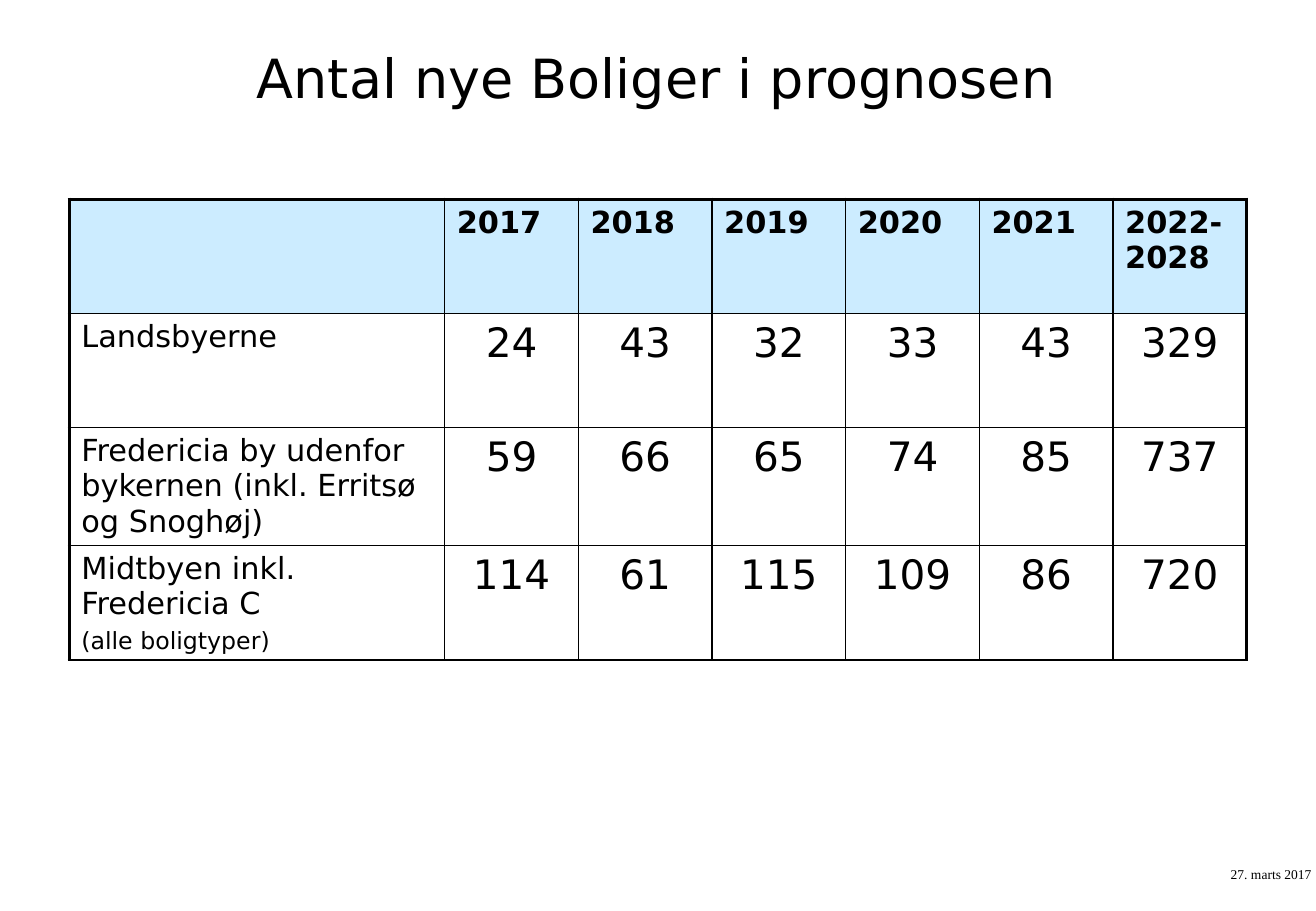
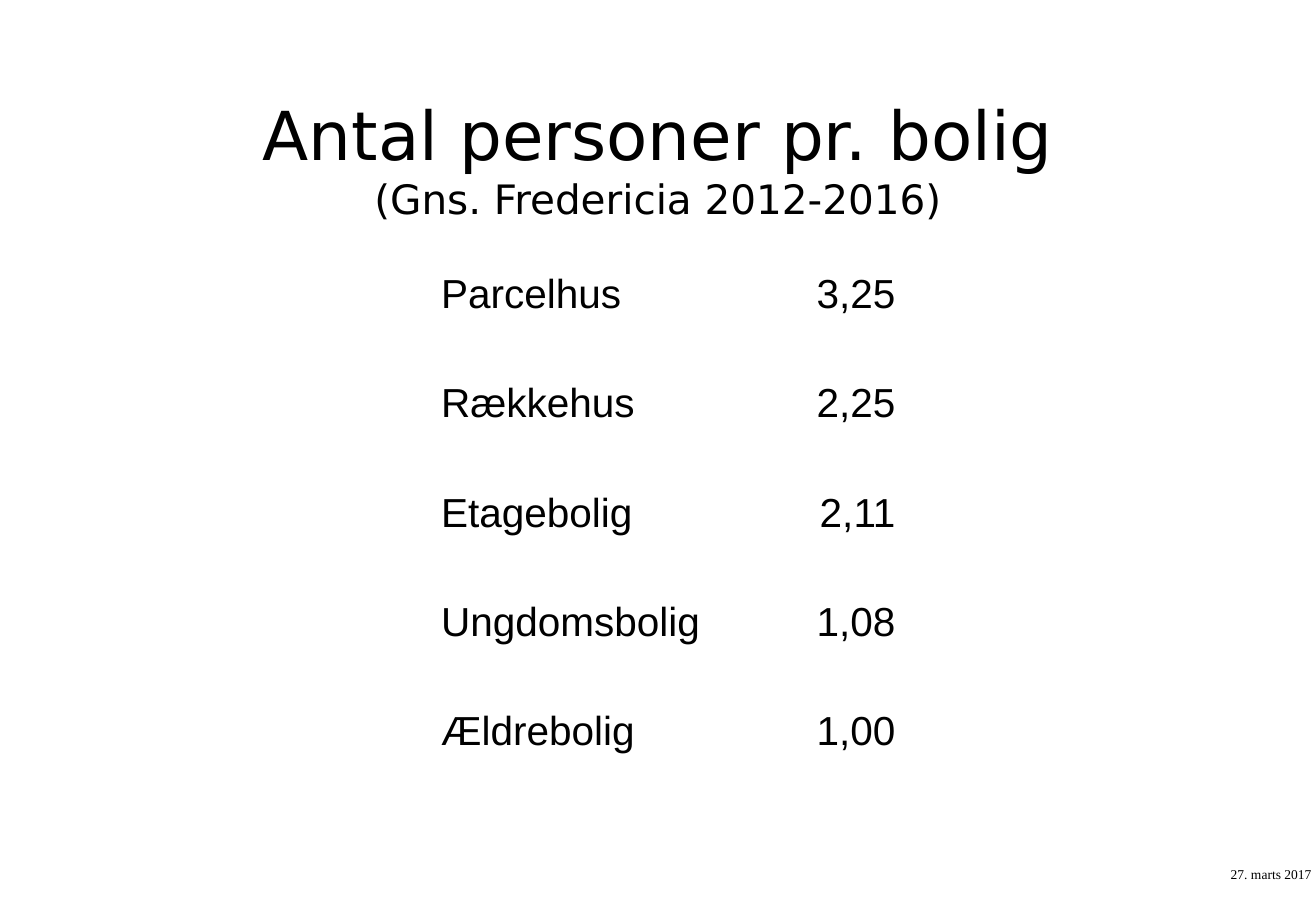
import pptx
import pptx.dml.color
import pptx.enum.text
import pptx.util
from lxml import etree
from pptx.util import Inches

INK = {"text": "000000", "line": "000000", "head": "CCECFF"}
SANS, PLAIN, SERIF = "DejaVu Sans", "Arial", "Times New Roman"
ALIGN = pptx.enum.text.PP_ALIGN
ANCHOR = pptx.enum.text.MSO_ANCHOR
NS = "http://schemas.openxmlformats.org/drawingml/2006/main"
NONE, THIN, THICK = 0, 1, 2.25

HOMES = [
    ["", "2017", "2018", "2019", "2020", "2021", "2022-2028"],
    ["Landsbyerne", "24", "43", "32", "33", "43", "329"],
    ["Fredericia by udenfor bykernen (inkl. Erritsø og Snoghøj)",
     "59", "66", "65", "74", "85", "737"],
    ["Midtbyen inkl. Fredericia C", "114", "61", "115", "109", "86", "720"],
]
PEOPLE = [
    ["Parcelhus", "3,25"],
    ["Rækkehus", "2,25"],
    ["Etagebolig", "2,11"],
    ["Ungdomsbolig", "1,08"],
    ["Ældrebolig", "1,00"],
]


def rgb(name):
    return pptx.dml.color.RGBColor.from_string(INK[name])


def style(para, text, size, face, align=ALIGN.LEFT, bold=False):
    para.text = text
    para.alignment = align
    font = para.font
    font.size = pptx.util.Pt(size)
    font.name = face
    font.bold = bold
    font.color.rgb = rgb("text")


def add_slide(deck, box, lines, anchor):
    slide = deck.slides.add_slide(deck.slide_layouts[5])
    title = slide.shapes.title
    title.left, title.top, title.width, title.height = map(Inches, box)
    frame = title.text_frame
    frame.auto_size = pptx.enum.text.MSO_AUTO_SIZE.NONE
    frame.vertical_anchor = anchor
    for num, (text, size) in enumerate(lines):
        para = frame.add_paragraph() if num else frame.paragraphs[0]
        style(para, text, size, SANS, ALIGN.CENTER)
    add_date(slide)
    return slide


def add_date(slide):
    box = slide.shapes.add_textbox(
        Inches(10.03), Inches(7.08), Inches(0.8), Inches(0.23))
    frame = box.text_frame
    frame.margin_right = 0
    frame.word_wrap = False
    style(frame.paragraphs[0], "27. marts 2017", 8, SERIF)


def add_grid(slide, left, top, cols, rows):
    frame = slide.shapes.add_table(
        len(rows), len(cols), Inches(left), Inches(top),
        Inches(sum(cols)), Inches(sum(rows)))
    table = frame.table
    table.first_row = table.horz_banding = False
    for col, width in zip(table.columns, cols):
        col.width = Inches(width)
    for row, height in zip(table.rows, rows):
        row.height = Inches(height)
    return table


def edge(cell, sides):
    props = cell._tc.get_or_add_tcPr()
    for side, width in sides.items():
        line = etree.SubElement(
            props, f"{{{NS}}}ln{side}", w=str(pptx.util.Pt(width)))
        if width:
            fill = etree.SubElement(line, f"{{{NS}}}solidFill")
            etree.SubElement(fill, f"{{{NS}}}srgbClr", val=INK["line"])
        else:
            etree.SubElement(line, f"{{{NS}}}noFill")


def fill_homes(table):
    last = len(HOMES[0]) - 1
    for r, row in enumerate(HOMES):
        for c, text in enumerate(row):
            cell = table.cell(r, c)
            cell.margin_bottom = Inches(0.02)
            edge(cell, {
                "L": THIN if c else THICK,
                "R": THICK if c == last else THIN,
                "T": THIN if r else THICK,
                "B": THIN,
            })
            if r:
                cell.fill.background()
            else:
                cell.fill.solid()
                cell.fill.fore_color.rgb = rgb("head")
            count = r > 0 and c > 0
            style(cell.text_frame.paragraphs[0], text, 24 if count else 18,
                  SANS, ALIGN.CENTER if count else ALIGN.LEFT, r == 0)
    note = table.cell(len(HOMES) - 1, 0).text_frame.add_paragraph()
    style(note, "(alle boligtyper)", 14, SANS)
    note.space_before = pptx.util.Pt(3)


def fill_people(table):
    for r, row in enumerate(PEOPLE):
        for c, text in enumerate(row):
            cell = table.cell(r, c)
            edge(cell, dict.fromkeys("LRTB", NONE))
            cell.fill.background()
            cell.vertical_anchor = ANCHOR.BOTTOM
            style(cell.text_frame.paragraphs[0], text, 24, PLAIN,
                  ALIGN.RIGHT if c else ALIGN.LEFT)


def main():
    deck = pptx.Presentation()
    deck.slide_width, deck.slide_height = Inches(10.83), Inches(7.5)

    slide = add_slide(deck, (0.8, 0.21, 9.21, 1.12),
                      [("Antal nye Boliger i prognosen", 32)], ANCHOR.TOP)
    slide.shapes.title.text_frame.margin_top = Inches(0.16)
    fill_homes(add_grid(slide, 0.57, 1.64, [3.09] + [1.1] * 6, [0.94] * 4))

    slide = add_slide(deck, (0.81, 0.67, 9.21, 1.25),
                      [("Antal personer pr. bolig", 40),
                       ("(Gns. Fredericia 2012-2016)", 24)], ANCHOR.MIDDLE)
    fill_people(add_grid(slide, 3.53, 1.7, [2.44, 1.5], [0.96] + [0.9] * 4))

    deck.save("out.pptx")


if __name__ == "__main__":
    main()
